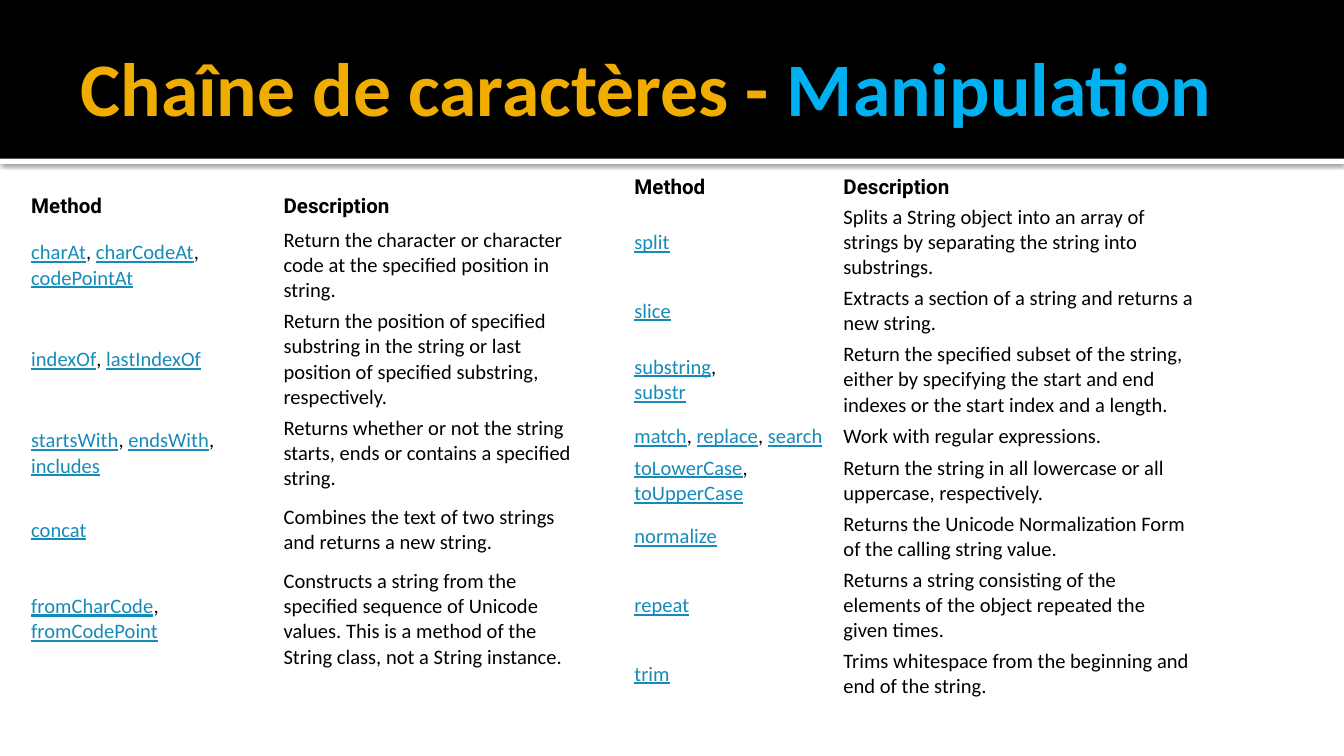
from dataclasses import dataclass
from typing import Any, NamedTuple

from lxml import etree
from pptx import Presentation
from pptx import util as u
from pptx.dml.color import RGBColor
from pptx.enum import shapes, text
from pptx.oxml import ns


@dataclass(frozen=True)
class Theme:
    black: str = "000000"
    white: str = "FFFFFF"
    gold: str = "F0AD00"
    sky: str = "00B0F0"
    link: str = "168BBA"
    body_font: str = "Calibri"
    heading_font: str = "Roboto"
    title_size: float = 40.5
    body_size: float = 11


class Band(NamedTuple):
    top: float
    height: float
    color: str
    shadowed: bool


class Method(NamedTuple):
    names: str
    description: str
    height: float


@dataclass(frozen=True)
class MethodTable:
    left: float
    top: float
    widths: tuple[float, float]
    heading_height: float
    methods: tuple[Method, ...]


THEME = Theme()
SLIDE_WIDTH, SLIDE_HEIGHT = 25.4, 14.29

BANDS = (
    Band(3, 0.1, THEME.white, True),
    Band(0, 3, THEME.black, False),
)

TABLES = (
    MethodTable(0.51, 3.56, (4.77, 5.63), 0.69, (
        Method("charAt charCodeAt\ncodePointAt",
               "Return the character or character code at the specified position in string.", 1.52),
        Method("indexOf lastIndexOf",
               "Return the position of specified substring in the string or last position "
               "of specified substring, respectively.", 1.98),
        Method("startsWith endsWith\nincludes",
               "Returns whether or not the string starts, ends or contains a specified string.", 1.52),
        Method("concat", "Combines the text of two strings and returns a new string.", 1.35),
        Method("fromCharCode\nfromCodePoint",
               "Constructs a string from the specified sequence of Unicode values. "
               "This is a method of the String class, not a String instance.", 1.98),
    )),
    MethodTable(11.91, 3.28, (3.95, 6.79), 0.53, (
        Method("split",
               "Splits a String object into an array of strings by separating the string "
               "into substrings.", 1.04),
        Method("slice", "Extracts a section of a string and returns a new string.", 1.04),
        Method("substring\nsubstr",
               "Return the specified subset of the string, either by specifying the start "
               "and end indexes or the start index and a length.", 1.47),
        Method("match replace search", "Work with regular expressions.", 0.61),
        Method("toLowerCase\ntoUpperCase",
               "Return the string in all lowercase or all uppercase, respectively.", 1.04),
        Method("normalize",
               "Returns the Unicode Normalization Form of the calling string value.", 1.04),
        Method("repeat",
               "Returns a string consisting of the elements of the object repeated the "
               "given times.", 1.04),
        Method("trim", "Trims whitespace from the beginning and end of the string.", 1.04),
    )),
)


def apply_format(target: Any, values: dict[str, Any]) -> None:
    for attribute, value in values.items():
        setattr(target, attribute, value)


def add_run(paragraph: Any, words: str, color: str = THEME.black,
            size: float = THEME.body_size, **style: Any) -> Any:
    run = paragraph.add_run()
    run.text = words
    apply_format(run.font, {"name": THEME.body_font, "size": u.Pt(size), "bold": False} | style)
    run.font.color.rgb = RGBColor.from_string(color)
    return run


def add_child(parent: Any, tag: str, **attributes: str) -> Any:
    return etree.SubElement(parent, ns.qn(tag), attributes)


def draw_band(slide: Any, band: Band) -> None:
    strip = slide.shapes.add_shape(
        shapes.MSO_SHAPE.RECTANGLE, 0, u.Cm(band.top), u.Cm(SLIDE_WIDTH), u.Cm(band.height))
    strip.fill.solid()
    strip.fill.fore_color.rgb = RGBColor.from_string(band.color)
    strip.line.fill.background()
    strip.shadow.inherit = False
    if band.shadowed:
        effects = strip.element.spPr.find(ns.qn("a:effectLst"))
        shadow = add_child(effects, "a:outerShdw", blurRad=str(u.Pt(2.5)), dist=str(u.Pt(0.8)),
                           dir="5400000", algn="tl", rotWithShape="0")
        shade = add_child(shadow, "a:srgbClr", val=THEME.black)
        add_child(shade, "a:alpha", val="60000")
    slide.shapes.title.element.addprevious(strip.element)


def write_title(title: Any) -> None:
    apply_format(title, {"left": u.Cm(1.27), "top": u.Cm(0.33),
                         "width": u.Cm(22.86), "height": u.Cm(2.62)})
    apply_format(title.text_frame, {
        "word_wrap": True, "auto_size": text.MSO_AUTO_SIZE.NONE,
        "vertical_anchor": text.MSO_ANCHOR.MIDDLE, "margin_left": u.Cm(0.25),
        "margin_right": u.Cm(0.13), "margin_top": u.Cm(0.13), "margin_bottom": u.Cm(0.13)})
    heading = title.text_frame.paragraphs[0]
    heading.alignment = text.PP_ALIGN.LEFT
    for words, color in (("Chaîne de caractères - ", THEME.gold), ("Manipulation", THEME.sky)):
        add_run(heading, words, color, THEME.title_size, bold=True)


def format_cell(cell: Any, margin_top: float) -> Any:
    apply_format(cell, {
        "vertical_anchor": text.MSO_ANCHOR.MIDDLE, "margin_left": u.Cm(0.08),
        "margin_right": u.Cm(0.08), "margin_top": u.Cm(margin_top), "margin_bottom": u.Cm(0.05)})
    properties = cell._tc.get_or_add_tcPr()
    for side in "LRTB":
        border = add_child(properties, f"a:ln{side}", w=str(u.Pt(1.5)))
        add_child(add_child(border, "a:solidFill"), "a:srgbClr", val=THEME.white)
    cell.fill.solid()
    cell.fill.fore_color.rgb = RGBColor.from_string(THEME.white)
    return cell.text_frame.paragraphs[0]


def write_names(paragraph: Any, names: str) -> None:
    lines = [line.split() for line in names.split("\n")]
    for line_number, line in enumerate(lines, 1):
        for position, name in enumerate(line, 1):
            add_run(paragraph, name, THEME.link, underline=True)
            if position < len(line):
                add_run(paragraph, ", ")
        if line_number < len(lines):
            comma = add_run(paragraph, ",")
            paragraph.add_line_break()
            add_child(comma._r.getnext(), "a:rPr", sz=str(int(THEME.body_size * 100)))


def draw_table(slide: Any, listing: MethodTable) -> None:
    heights = (listing.heading_height, *(method.height for method in listing.methods))
    grid = slide.shapes.add_table(
        len(heights), 2, u.Cm(listing.left), u.Cm(listing.top),
        u.Cm(sum(listing.widths)), u.Cm(sum(heights))).table
    apply_format(grid, {"first_row": False, "horz_banding": False})
    for column, width in zip(grid.columns, listing.widths):
        column.width = u.Cm(width)
    for row, height in zip(grid.rows, heights):
        row.height = u.Cm(height)
    for column, heading in enumerate(("Method", "Description")):
        add_run(format_cell(grid.cell(0, column), 0.03), heading,
                name=THEME.heading_font, bold=True)
    for row, method in enumerate(listing.methods, 1):
        write_names(format_cell(grid.cell(row, 0), 0.05), method.names)
        add_run(format_cell(grid.cell(row, 1), 0.05), method.description)


def main() -> None:
    deck = Presentation()
    apply_format(deck, {"slide_width": u.Cm(SLIDE_WIDTH), "slide_height": u.Cm(SLIDE_HEIGHT)})
    slide = deck.slides.add_slide(deck.slide_layouts.get_by_name("Title Only"))
    for band in BANDS:
        draw_band(slide, band)
    write_title(slide.shapes.title)
    for listing in TABLES:
        draw_table(slide, listing)
    deck.save("out.pptx")


if __name__ == "__main__":
    main()
